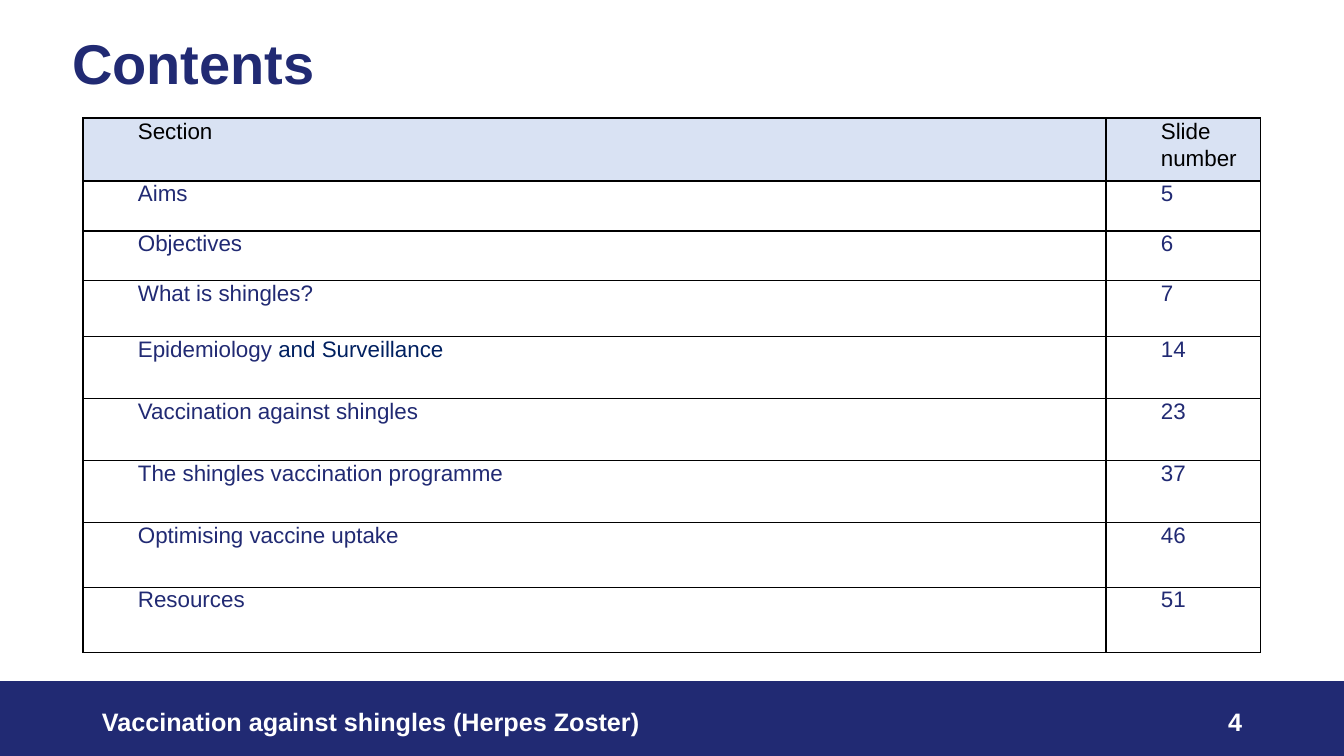
"""Build the contents slide of a shingles vaccination deck."""
from lxml.etree import SubElement
from pptx import Presentation
from pptx.dml.color import RGBColor
from pptx.enum.shapes import MSO_SHAPE
from pptx.enum.text import MSO_ANCHOR, PP_ALIGN
from pptx.oxml.ns import qn
from pptx.util import Pt

TITLE = "Contents"
FOOTER = "Vaccination against shingles (Herpes Zoster)"
SLIDE_NUMBER = "4"
COLOURS = {
    "navy": "212A73",
    "dark blue": "002060",
    "pale blue": "D9E2F3",
    "black": "000000",
    "white": "FFFFFF",
}
HEADER = ([("Section", "black")], [("Slide number", "black")])
SECTIONS = [
    ([("Aims", "navy")], 5),
    ([("Objectives", "navy")], 6),
    ([("What is shingles?", "navy")], 7),
    ([("Epidemiology ", "navy"), ("and Surveillance", "dark blue")], 14),
    ([("Vaccination against shingles", "navy")], 23),
    ([("The shingles vaccination programme", "navy")], 37),
    ([("Optimising vaccine uptake", "navy")], 46),
    ([("Resources", "navy")], 51),
]
ROWS = [HEADER] + [(runs, [(str(number), "navy")]) for runs, number in SECTIONS]

SLIDE_SIZE = (1344, 756)
BAR_BOX = (0, 682, 1344, 74)
TITLE_BOX = (62, 31, 1178, 146)
NUMBER_BOX = (950, 701, 302, 40)
FOOTER_BOX = (92, 701, 806, 40)
TABLE_CORNER = (83, 118)
COLUMN_WIDTHS = [1023, 155]
ROW_HEIGHTS = [63, 50, 50, 56, 62, 62, 62, 65, 65]
CELL_INDENT = 50

TITLE_FONT = {"name": "Arial", "size": Pt(40), "bold": True}
FOOTER_FONT = {"name": "Arial", "size": Pt(18), "bold": True}
CELL_FONT = {"name": "Arial", "size": Pt(16), "bold": False}


def px(length):
    return round(length * 914400 / 100.8)


def scaled(box):
    return [px(length) for length in box]


def set_attributes(target, values):
    for name, value in values.items():
        setattr(target, name, value)


def rgb(colour):
    return RGBColor.from_string(COLOURS[colour])


def add_run(paragraph, text, font, colour):
    run = paragraph.add_run()
    run.text = text
    set_attributes(run.font, font)
    run.font.color.rgb = rgb(colour)


def add_footer_text(slide, box, text, alignment):
    frame = slide.shapes.add_textbox(*scaled(box)).text_frame
    set_attributes(frame, {"word_wrap": True, "vertical_anchor": MSO_ANCHOR.MIDDLE})
    paragraph = frame.paragraphs[0]
    paragraph.alignment = alignment
    add_run(paragraph, text, FOOTER_FONT, "white")


def add_borders(cell):
    properties = cell._tc.get_or_add_tcPr()
    for side in ("lnL", "lnR", "lnT", "lnB"):
        line = SubElement(properties, qn(f"a:{side}"), w=str(Pt(1)))
        fill = SubElement(line, qn("a:solidFill"))
        SubElement(fill, qn("a:srgbClr"), val=COLOURS["black"])


def fill_cell(cell, runs, is_header):
    set_attributes(cell, {
        "margin_left": px(5), "margin_right": px(5),
        "margin_top": 0, "margin_bottom": 0,
        "vertical_anchor": MSO_ANCHOR.TOP,
    })
    add_borders(cell)
    if is_header:
        cell.fill.solid()
        cell.fill.fore_color.rgb = rgb("pale blue")
    else:
        cell.fill.background()
    paragraph = cell.text_frame.paragraphs[0]
    paragraph.line_spacing = 1.07 if is_header else 1.0
    indent = paragraph._p.get_or_add_pPr()
    indent.set("marL", str(px(CELL_INDENT)))
    indent.set("indent", "0")
    for text, colour in runs:
        add_run(paragraph, text, CELL_FONT, colour)


def add_contents_table(slide):
    size = (sum(COLUMN_WIDTHS), sum(ROW_HEIGHTS))
    table = slide.shapes.add_table(
        len(ROWS), len(COLUMN_WIDTHS), *scaled(TABLE_CORNER + size)
    ).table
    set_attributes(table, {"first_row": False, "horz_banding": False})
    for column, width in zip(table.columns, COLUMN_WIDTHS):
        column.width = px(width)
    for row, height in zip(table.rows, ROW_HEIGHTS):
        row.height = px(height)
    for row_index, row in enumerate(ROWS):
        for column_index, runs in enumerate(row):
            fill_cell(table.cell(row_index, column_index), runs, row_index == 0)


def add_bar(slide):
    bar = slide.shapes.add_shape(MSO_SHAPE.RECTANGLE, *scaled(BAR_BOX))
    bar.shadow.inherit = False
    bar.fill.solid()
    bar.fill.fore_color.rgb = rgb("navy")
    bar.line.color.rgb = rgb("navy")
    bar.line.width = Pt(1)


def add_title(slide):
    title = slide.shapes.title
    set_attributes(title, dict(zip(("left", "top", "width", "height"), scaled(TITLE_BOX))))
    title.text_frame.vertical_anchor = MSO_ANCHOR.TOP
    paragraph = title.text_frame.paragraphs[0]
    set_attributes(paragraph, {"alignment": PP_ALIGN.LEFT, "line_spacing": 0.9})
    add_run(paragraph, TITLE, TITLE_FONT, "navy")


def main():
    presentation = Presentation()
    presentation.slide_width, presentation.slide_height = scaled(SLIDE_SIZE)
    slide = presentation.slides.add_slide(presentation.slide_layouts[5])
    add_bar(slide)
    add_title(slide)
    add_footer_text(slide, NUMBER_BOX, SLIDE_NUMBER, PP_ALIGN.RIGHT)
    add_contents_table(slide)
    add_footer_text(slide, FOOTER_BOX, FOOTER, PP_ALIGN.LEFT)
    presentation.save("out.pptx")


if __name__ == "__main__":
    main()
